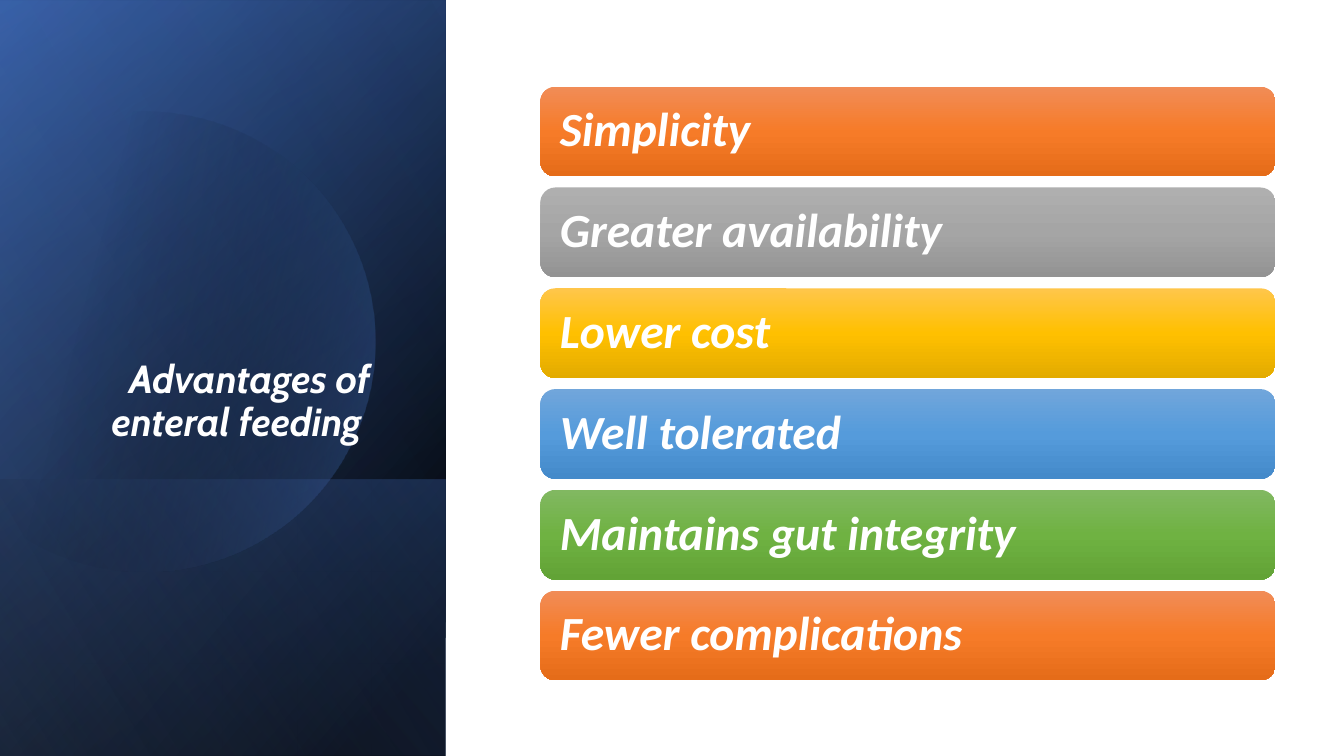
from dataclasses import dataclass, field
from math import acos, cos, sin

from lxml.etree import SubElement
from pptx import Presentation
from pptx.dml.color import RGBColor
from pptx.enum.shapes import MSO_SHAPE
from pptx.enum.text import MSO_ANCHOR, PP_ALIGN
from pptx.oxml.ns import qn
from pptx.slide import Slide
from pptx.util import Inches, Pt

COLORS = {
    "white": "FFFFFF", "black": "000000", "navy": "2F5597",
    "blue": "4472C4", "pale_blue": "8FAADC",
}
BAR_GRADIENTS = {
    "orange": ("F18C57", "F67B28", "E56C19"),
    "gray": ("AFAFAF", "A5A5A5", "939393"),
    "gold": ("FFC64B", "FFC000", "E3AB00"),
    "sky": ("71A6DB", "559BDB", "448ACA"),
    "green": ("81B861", "6FB242", "62A336"),
}
ADVANTAGES = [
    ("Simplicity", "orange"),
    ("Greater availability", "gray"),
    ("Lower cost", "gold"),
    ("Well tolerated", "sky"),
    ("Maintains gut integrity", "green"),
    ("Fewer complications", "orange"),
]
BACKDROPS = [
    ((-1.54, 1.54, 7.5, 4.42), 50, [(8, "black", 100), (100, "navy", 100)]),
    ((-1.54, 1.55, 7.5, 4.42), 30, [(0, "black", 0), (99, "blue", 46)]),
    ((0.84, 3.92, 2.74, 4.42), 130, [(2, "blue", 29), (100, "black", 30)]),
]
DISC_STOPS = [(29, "black", 0), (100, "blue", 43)]
SHEEN = ((-1.54, 1.54, 7.5, 4.42), 120, [(0, "black", 0), (99, "pale_blue", 11)])


@dataclass
class SlideBuilder:
    """Draws gradient panels, a disc, a title and bars on one slide."""

    slide: Slide
    font_style: dict = field(default_factory=lambda: {"bold": True, "italic": True})

    def paint(self, shape, stops, angle):
        shape.shadow.inherit = False
        shape.line.fill.background()
        shape.fill.gradient()
        shape.fill.gradient_angle = (360 - angle) % 360
        stop_list = shape.element.spPr.find(qn("a:gradFill")).find(qn("a:gsLst"))
        for stop in list(stop_list):
            stop_list.remove(stop)
        for position, color, opacity in stops:
            stop = SubElement(stop_list, qn("a:gs"), pos=str(position * 1000))
            value = SubElement(stop, qn("a:srgbClr"), val=COLORS.get(color, color))
            if opacity < 100:
                SubElement(value, qn("a:alpha"), val=str(opacity * 1000))

    def add_text(self, shape, text, font_name, size, margin, frame_format, alignment):
        frame = shape.text_frame
        sides = ("left", "right", "top", "bottom")
        margins = {f"margin_{side}": Inches(margin) for side in sides}
        for name, value in {"word_wrap": True, **margins, **frame_format}.items():
            setattr(frame, name, value)
        paragraph = frame.paragraphs[0]
        paragraph.alignment = alignment
        paragraph.line_spacing = 0.9
        run = paragraph.add_run()
        run.text = text
        for name, value in {"name": font_name, "size": Pt(size), **self.font_style}.items():
            setattr(run.font, name, value)
        run.font.color.rgb = RGBColor.from_string(COLORS["white"])
        return paragraph

    def backdrop(self, box, angle, stops):
        shape = self.slide.shapes.add_shape(MSO_SHAPE.RECTANGLE, *map(Inches, box))
        shape.rotation = 90
        shape.element.spPr.find(qn("a:xfrm")).set("flipH", "1")
        self.paint(shape, stops, angle)

    def disc(self, center_x, center_y, radius, left_edge, angle, stops, steps=120):
        reach = acos((left_edge - center_x) / radius)
        turns = [reach * (2 * step / steps - 1) for step in range(steps + 1)]
        points = [
            (Inches(center_x + radius * cos(turn)), Inches(center_y + radius * sin(turn)))
            for turn in turns
        ]
        builder = self.slide.shapes.build_freeform(*points[0])
        builder.add_line_segments(points[1:], close=True)
        self.paint(builder.convert_to_shape(), stops, angle)

    def title(self, box, text, first_line_indent):
        shape = self.slide.shapes.add_textbox(*map(Inches, box))
        paragraph = self.add_text(shape, text, "Cabin", 28, 0.1,
                                  {"vertical_anchor": MSO_ANCHOR.BOTTOM,
                                   "margin_bottom": Inches(0.05)}, PP_ALIGN.CENTER)
        properties = paragraph._p.get_or_add_pPr()
        properties.set("marL", "0")
        properties.set("indent", str(Inches(first_line_indent)))

    def bar(self, box, text, colors):
        shape = self.slide.shapes.add_shape(MSO_SHAPE.ROUNDED_RECTANGLE, *map(Inches, box))
        stops = [(50 * index, color, 100) for index, color in enumerate(colors)]
        self.paint(shape, stops, 90)
        self.add_text(shape, text, "Calibri", 34, 0.14,
                      {"vertical_anchor": MSO_ANCHOR.MIDDLE,
                       "margin_left": Inches(0.15)}, PP_ALIGN.LEFT)


def main():
    presentation = Presentation()
    presentation.slide_width = Inches(13.33)
    presentation.slide_height = Inches(7.5)
    builder = SlideBuilder(presentation.slides.add_slide(presentation.slide_layouts[6]))
    for backdrop in BACKDROPS:
        builder.backdrop(*backdrop)
    builder.disc(1.44, 3.39, 2.28, -0.15, 14, DISC_STOPS)
    builder.backdrop(*SHEEN)
    builder.title((0.64, 3.17, 3.41, 1.29), "Advantages of enteral feeding", 0.26)
    for row, (text, color) in enumerate(ADVANTAGES):
        builder.bar((5.36, 0.86 + row, 7.29, 0.89), text, BAR_GRADIENTS[color])
    presentation.save("out.pptx")


if __name__ == "__main__":
    main()
